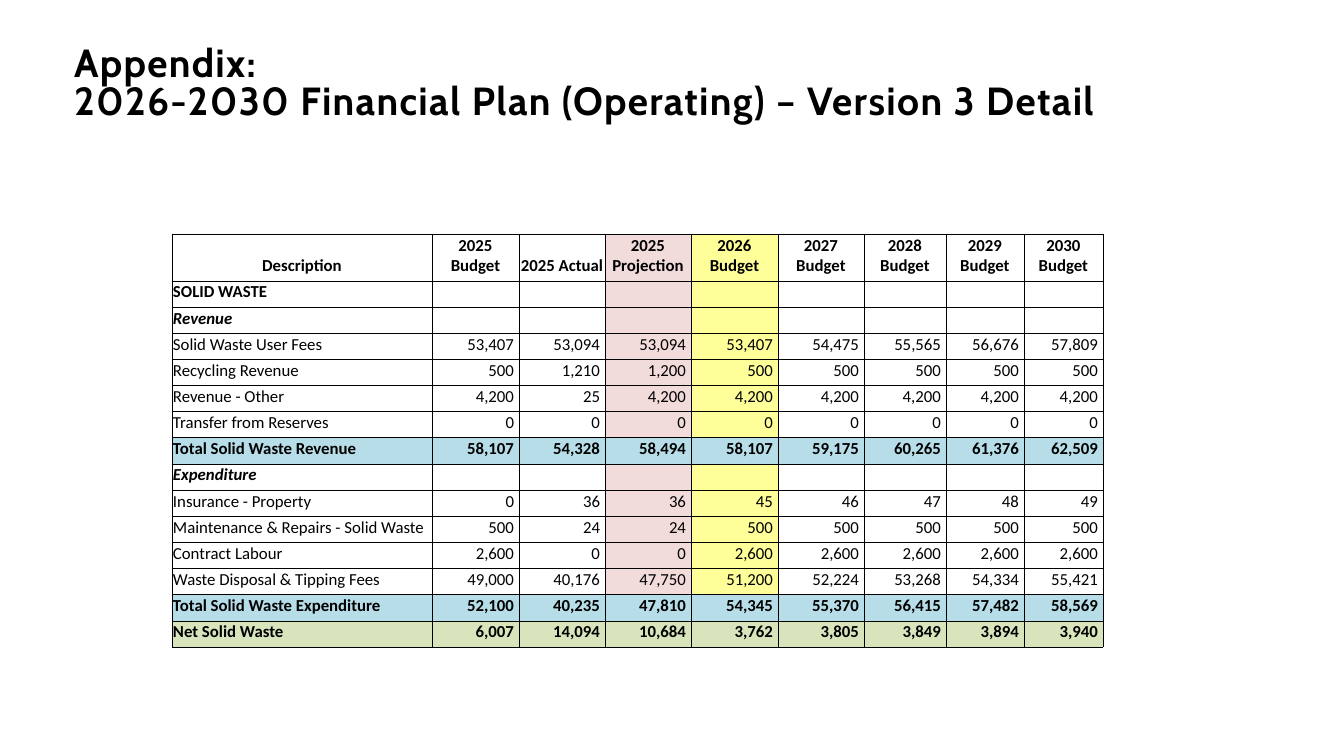
import pptx
import pptx.util
import pptx.dml.color
import pptx.enum.text
import pptx.oxml.ns
from lxml import etree

ALIGN = pptx.enum.text.PP_ALIGN
BOTTOM = pptx.enum.text.MSO_ANCHOR.BOTTOM
HUES = {"ink": "000000", "rose": "F2DCDB", "yellow": "FFFF99",
        "blue": "B7DEE8", "green": "D8E4BC"}
WIDTHS = [260, 87, 86, 86, 87, 86, 82, 78, 79]
HEAD = ["Description", "2025\vBudget", "2025 Actual", "2025 Projection", "2026\vBudget",
        "2027\vBudget", "2028\vBudget", "2029\vBudget", "2030\vBudget"]
ROWS = [
    ("SOLID WASTE", ""),
    ("Revenue", ""),
    ("Solid Waste User Fees", "53,407 53,094 53,094 53,407 54,475 55,565 56,676 57,809"),
    ("Recycling Revenue", "500 1,210 1,200 500 500 500 500 500"),
    ("Revenue - Other", "4,200 25 4,200 4,200 4,200 4,200 4,200 4,200"),
    ("Transfer from Reserves", "0 0 0 0 0 0 0 0"),
    ("Total Solid Waste Revenue", "58,107 54,328 58,494 58,107 59,175 60,265 61,376 62,509"),
    ("Expenditure", ""),
    ("Insurance - Property", "0 36 36 45 46 47 48 49"),
    ("Maintenance & Repairs - Solid Waste", "500 24 24 500 500 500 500 500"),
    ("Contract Labour", "2,600 0 0 2,600 2,600 2,600 2,600 2,600"),
    ("Waste Disposal & Tipping Fees", "49,000 40,176 47,750 51,200 52,224 53,268 54,334 55,421"),
    ("Total Solid Waste Expenditure", "52,100 40,235 47,810 54,345 55,370 56,415 57,482 58,569"),
    ("Net Solid Waste", "6,007 14,094 10,684 3,762 3,805 3,849 3,894 3,940"),
]


def px(n):
    return pptx.util.Emu(round(n * 914400 / 100.8))


def style(font, name, size, bold):
    font.name, font.size, font.bold = name, pptx.util.Pt(size), bold
    font.color.rgb = pptx.dml.color.RGBColor.from_string(HUES["ink"])


deck = pptx.Presentation()
deck.slide_width, deck.slide_height = px(1344), px(756)
slide = deck.slides.add_slide(deck.slide_layouts[6])

# Title
frame = slide.shapes.add_textbox(px(74), px(-12), px(1166), px(135)).text_frame
frame.word_wrap = True
frame.vertical_anchor = BOTTOM
frame.margin_left = frame.margin_top = frame.margin_right = frame.margin_bottom = 0
title = frame.paragraphs[0]
title.text = "Appendix:\v2026-2030 Financial Plan (Operating) – Version 3 Detail"
title.line_spacing = 0.8
style(title.font, "Cabin", 28, True)
for run in title.runs:
    run.font._element.set("spc", "100")

# Financial plan
grid = [HEAD] + [[name] + (nums.split() or [""] * 8) for name, nums in ROWS]
table = slide.shapes.add_table(len(grid), len(HEAD), px(172), px(234),
                               px(sum(WIDTHS)), px(414)).table
table.first_row = table.horz_banding = False
for col, width in zip(table.columns, WIDTHS):
    col.width = px(width)
for r, line in enumerate(grid):
    table.rows[r].height = px(26 if r else 47)
    label = line[0]
    total = label.startswith("Total")
    above = r + 1 < len(grid) and grid[r + 1][0].startswith("Total")
    net = label.startswith("Net")
    group = label in ("Revenue", "Expenditure")
    for c, text in enumerate(line):
        cell = table.cell(r, c)
        cell.vertical_anchor = BOTTOM
        cell.margin_left = cell.margin_top = px(1)
        cell.margin_right = px(5 if r and c else 1)
        cell.margin_bottom = px(5)
        para = cell.text_frame.paragraphs[0]
        para.text = text
        para.alignment = ALIGN.CENTER if r == 0 else ALIGN.RIGHT if c else ALIGN.LEFT
        style(para.font, "Calibri", 12, r < 2 or group or total or net)
        para.font.italic = group
        if not text:
            etree.SubElement(para._p, pptx.oxml.ns.qn("a:endParaRPr"), sz="1200")

        props = cell._tc.get_or_add_tcPr()
        for side in "LRTB":
            thick = (side == "T" and total) or (side == "B" and above)
            edge = etree.SubElement(props, pptx.oxml.ns.qn("a:ln" + side),
                                    w="12700" if thick else "6350")
            paint = etree.SubElement(edge, pptx.oxml.ns.qn("a:solidFill"))
            etree.SubElement(paint, pptx.oxml.ns.qn("a:srgbClr"), val=HUES["ink"])

        hue = "blue" if total else "green" if net else {3: "rose", 4: "yellow"}.get(c)
        if hue:
            cell.fill.solid()
            cell.fill.fore_color.rgb = pptx.dml.color.RGBColor.from_string(HUES[hue])
        else:
            cell.fill.background()

deck.save("out.pptx")
